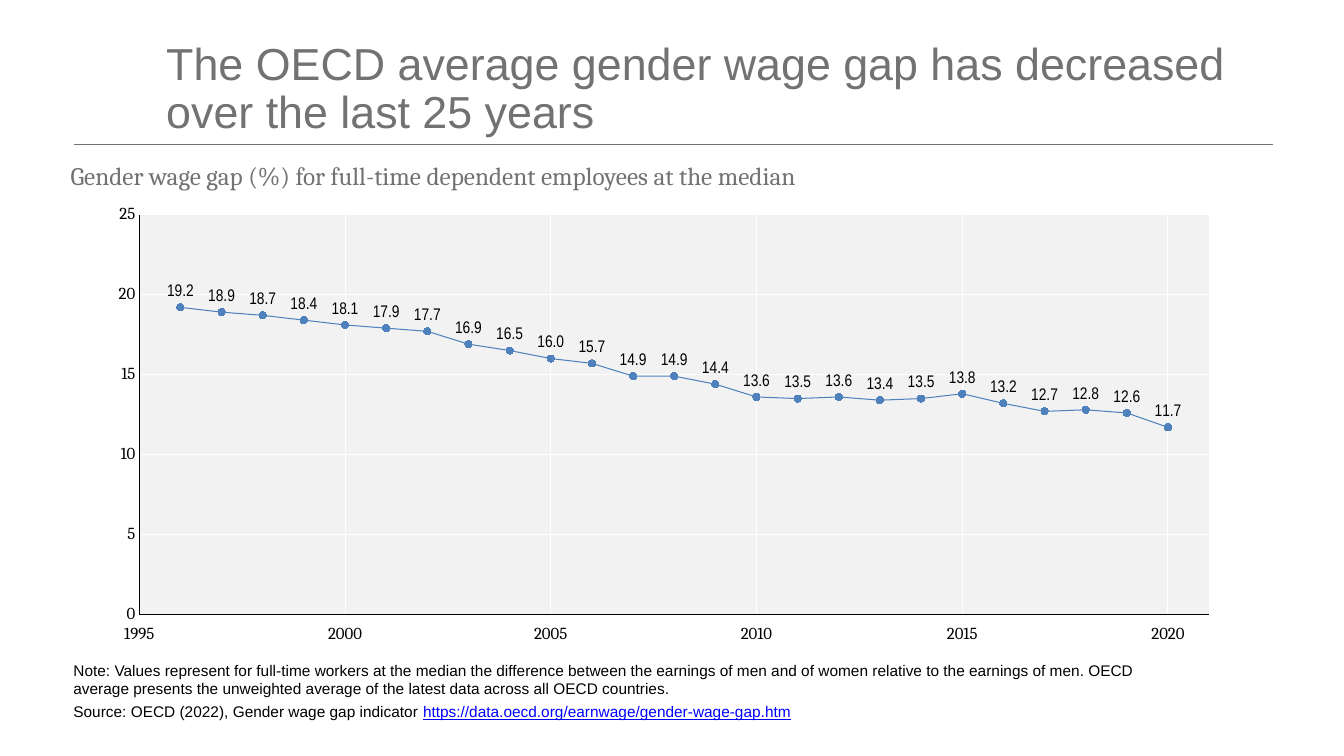
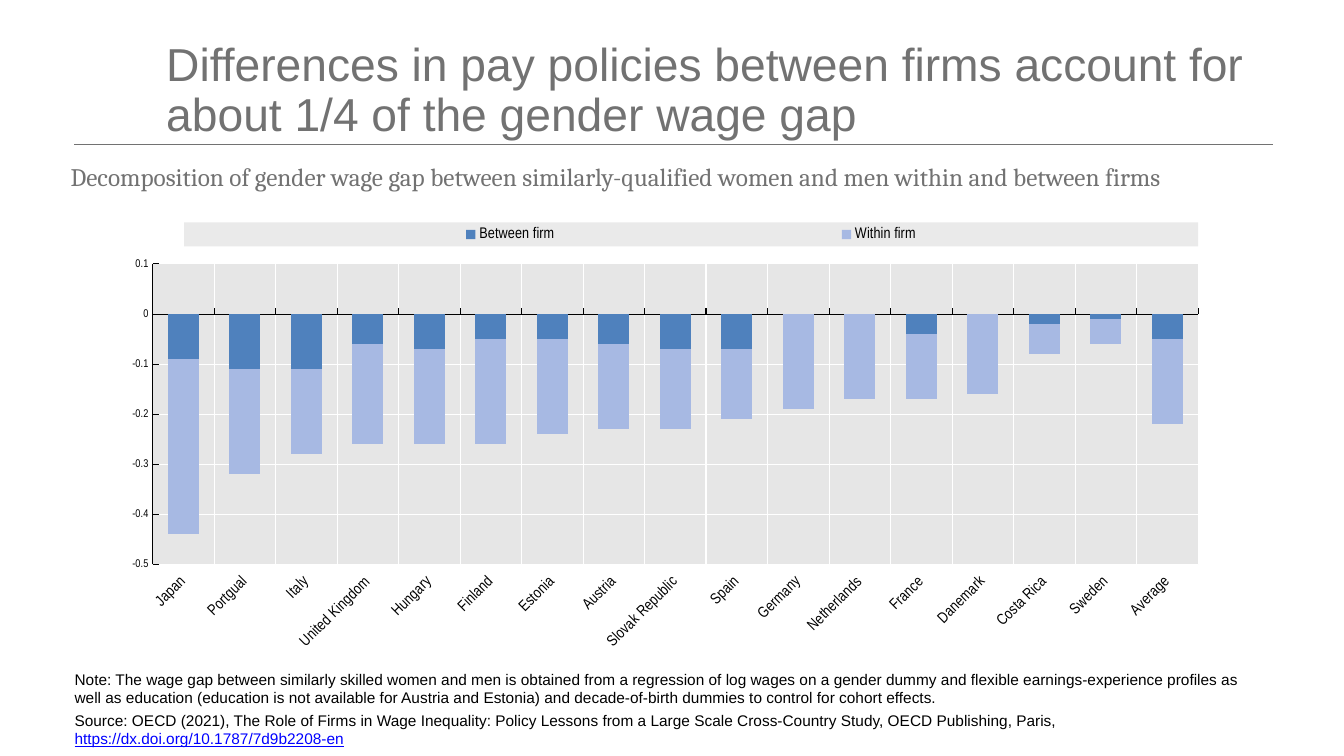
from dataclasses import dataclass

from lxml.etree import SubElement
from pptx import Presentation
from pptx.chart.axis import ValueAxis
from pptx.chart.chart import Chart
from pptx.chart.data import CategoryChartData, XyChartData
from pptx.chart.datalabel import DataLabels
from pptx.dml.color import RGBColor
from pptx.enum.chart import (XL_CHART_TYPE, XL_LABEL_POSITION, XL_LEGEND_POSITION,
                             XL_MARKER_STYLE, XL_TICK_LABEL_POSITION, XL_TICK_MARK)
from pptx.enum.shapes import MSO_CONNECTOR
from pptx.oxml import parse_xml
from pptx.oxml.ns import nsdecls, qn
from pptx.slide import Slide
from pptx.text.text import Font, TextFrame
from pptx.util import Cm, Pt


# Theme
@dataclass(frozen=True)
class Theme:
    grey: str = "727272"
    black: str = "000000"
    white: str = "FFFFFF"
    link: str = "0000FF"
    blue: str = "4F81BD"
    pale: str = "A7B9E3"
    light: str = "F2F2F2"
    mid: str = "E6E6E6"
    band: str = "EAEAEA"
    sans: str = "Arial"
    thin: str = "Arial Narrow"
    serif: str = "Cambria"
    head: float = 32
    wide: float = 33
    sub: float = 18
    note: float = 11
    base: float = 10
    label: float = 12
    small: float = 8
    hair: float = 0.5
    line: float = 0.75


THEME = Theme()


@dataclass(frozen=True)
class Box:
    left: float
    top: float
    width: float
    height: float

    def spans(self) -> tuple[Cm, Cm, Cm, Cm]:
        return Cm(self.left), Cm(self.top), Cm(self.width), Cm(self.height)


@dataclass(frozen=True)
class Page:
    title: str
    size: float
    sub: str
    sub_box: Box
    note: str
    source: str
    link: str
    note_box: Box
    chart_box: Box
    pitch: float | None = None


# Content
TREND = Page(
    title="The OECD average gender wage gap has decreased over the last 25 years",
    size=THEME.head,
    sub="Gender wage gap (%) for full-time dependent employees at the median",
    sub_box=Box(1.53, 3.91, 30.76, 1.02),
    note="Note: Values represent for full-time workers at the median the difference "
         "between the earnings of men and of women relative to the earnings of men. "
         "OECD average presents the unweighted average of the latest data across all "
         "OECD countries.",
    source="Source: OECD (2022), Gender wage gap indicator ",
    link="https://data.oecd.org/earnwage/gender-wage-gap.htm",
    note_box=Box(1.6, 16.53, 28.6, 1.78),
    chart_box=Box(2.74, 4.94, 27.79, 11.39),
)
FIRMS = Page(
    title="Differences in pay policies between firms account for about 1/4 of the "
          "gender wage gap",
    size=THEME.wide,
    sub="Decomposition of gender wage gap between similarly-qualified women and men "
        "within and between firms",
    sub_box=Box(1.53, 4.24, 31.6, 0.71),
    note="Note: The wage gap between similarly skilled women and men is obtained from a "
         "regression of log wages on a gender dummy and flexible earnings-experience "
         "profiles as well as education (education is not available for Austria and "
         "Estonia) and decade-of-birth dummies to control for cohort effects.",
    source="Source: OECD (2021), The Role of Firms in Wage Inequality: Policy Lessons "
           "from a Large Scale Cross-Country Study, OECD Publishing, Paris, ",
    link="https://dx.doi.org/10.1787/7d9b2208-en",
    note_box=Box(1.63, 16.75, 30.1, 2.24),
    chart_box=Box(3.09, 5.45, 27.16, 11.02),
    pitch=13,
)
START = 1995
GAPS = (None, 19.2, 18.9, 18.7, 18.4, 18.1, 17.9, 17.7, 16.9, 16.5, 16.0, 15.7, 14.9,
        14.9, 14.4, 13.6, 13.5, 13.6, 13.4, 13.5, 13.8, 13.2, 12.7, 12.8, 12.6, 11.7)
LANDS = ("Japan", "Portgual", "Italy", "United Kingdom", "Hungary", "Finland", "Estonia",
         "Austria", "Slovak Republic", "Spain", "Germany", "Netherlands", "France",
         "Danemark", "Costa Rica", "Sweden", "Average")
BETWEEN = (-0.09, -0.11, -0.11, -0.06, -0.07, -0.05, -0.05, -0.06, -0.07, -0.07, 0, 0,
           -0.04, 0, -0.02, -0.01, -0.05)
WITHIN = (-0.35, -0.21, -0.17, -0.2, -0.19, -0.21, -0.19, -0.17, -0.16, -0.14, -0.19,
          -0.17, -0.13, -0.16, -0.06, -0.05, -0.17)


# Text and frame
def style(font: Font, face: str, size: float, color: str) -> None:
    font.name, font.size = face, Pt(size)
    font.color.rgb = RGBColor.from_string(color)


def add_text(slide: Slide, box: Box, text: str, face: str, size: float,
             color: str) -> TextFrame:
    frame = slide.shapes.add_textbox(*box.spans()).text_frame
    frame.word_wrap = True
    frame.text = text
    for para in frame.paragraphs:
        style(para.runs[0].font, face, size, color)
    return frame


def add_frame(slide: Slide, page: Page) -> None:
    # Rule under the title
    rule = slide.shapes.add_connector(MSO_CONNECTOR.STRAIGHT, Cm(1.87), Cm(3.65),
                                      Cm(32.07), Cm(3.65))
    rule.line.color.rgb = RGBColor.from_string(THEME.grey)
    rule.line.width = Pt(THEME.hair)
    SubElement(rule._element.spPr, qn("a:effectLst"))

    # Title and subtitle
    title = add_text(slide, Box(3.94, 0.93, 28.68, 1.19), page.title, THEME.sans,
                     page.size, THEME.grey)
    title.paragraphs[0].line_spacing = 0.9
    sub = add_text(slide, page.sub_box, page.sub, THEME.serif, THEME.sub, THEME.grey)
    if page.pitch:
        sub.paragraphs[0].line_spacing = Pt(page.pitch)

    # Note and source
    notes = add_text(slide, page.note_box, f"{page.note}\n{page.source}", THEME.sans,
                     THEME.note, THEME.black)
    for para in notes.paragraphs:
        para.space_after = Pt(3)
    link = notes.paragraphs[-1].add_run()
    link.text = page.link
    style(link.font, THEME.sans, THEME.note, THEME.link)
    link.font.underline = True


# Chart parts
def place(part, index: int, x: float, y: float, w: float, h: float) -> None:
    for old in part.findall(qn("c:layout")):
        part.remove(old)
    part.insert(index, parse_xml(
        f'<c:layout {nsdecls("c")}><c:manualLayout>'
        '<c:xMode val="edge"/><c:yMode val="edge"/>'
        f'<c:x val="{x}"/><c:y val="{y}"/><c:w val="{w}"/><c:h val="{h}"/>'
        '</c:manualLayout></c:layout>'))


def fill_xml(color: str, edge: str | None = None):
    def solid(tint: str) -> str:
        return f'<a:solidFill><a:srgbClr val="{tint}"/></a:solidFill>'
    width = Pt(THEME.line)
    line = f'<a:ln w="{width}">{solid(edge)}</a:ln>' if edge else '<a:ln><a:noFill/></a:ln>'
    return parse_xml(f'<c:spPr {nsdecls("c", "a")}>{solid(color)}{line}</c:spPr>')


def set_axis(axis, face: str, size: float, tick: XL_TICK_MARK) -> None:
    axis.has_major_gridlines = True
    for line, color in ((axis.format.line, THEME.black),
                        (axis.major_gridlines.format.line, THEME.white)):
        line.color.rgb = RGBColor.from_string(color)
        line.width = Pt(THEME.line)
    axis.major_tick_mark = tick
    axis.minor_tick_mark = XL_TICK_MARK.NONE
    style(axis.tick_labels.font, face, size, THEME.black)


def set_scale(axis: ValueAxis, low: float, high: float, step: float) -> None:
    axis.minimum_scale, axis.maximum_scale, axis.major_unit = low, high, step


def add_chart(slide: Slide, box: Box, kind: XL_CHART_TYPE, data, color: str,
              edge: str | None, top: float, height: float) -> Chart:
    chart = slide.shapes.add_chart(kind, *box.spans(), data).chart
    chart.has_title = chart.has_legend = False
    style(chart.font, THEME.serif, THEME.base, THEME.grey)
    chart.plots[0].vary_by_categories = False
    chart.category_axis.tick_label_position = XL_TICK_LABEL_POSITION.LOW
    area = chart._chartSpace.chart.plotArea
    place(area, 0, 0.009, top, 0.989, height)
    area.append(fill_xml(color, edge))
    return chart


# Line of the average gap
def add_trend(slide: Slide, box: Box) -> None:
    data = XyChartData()
    points = data.add_series("Series 1")
    for year, gap in enumerate(GAPS, START):
        points.add_data_point(year, gap)
    chart = add_chart(slide, box, XL_CHART_TYPE.XY_SCATTER_LINES, data, THEME.light,
                      THEME.white, 0.02, 0.97)
    for axis in (chart.category_axis, chart.value_axis):
        set_axis(axis, THEME.serif, THEME.label, XL_TICK_MARK.NONE)
        axis.tick_labels.number_format = "General"
        axis.tick_labels.number_format_is_linked = False
    set_scale(chart.category_axis, 1995, 2021, 5)
    set_scale(chart.value_axis, 0, 25, 5)

    blue = RGBColor.from_string(THEME.blue)
    series = chart.plots[0].series[0]
    # Years without a value hold no point
    cache = series._element.find(qn("c:yVal")).find(f".//{qn('c:numCache')}")
    for point in cache.findall(qn("c:pt")):
        if GAPS[int(point.get("idx"))] is None:
            cache.remove(point)
    series.format.line.color.rgb = blue
    series.format.line.width = Pt(THEME.line)
    mark = series.marker
    mark.style, mark.size = XL_MARKER_STYLE.CIRCLE, 5
    mark.format.fill.solid()
    mark.format.fill.fore_color.rgb = blue
    mark.format.line.color.rgb = blue

    labels = DataLabels(series._element.get_or_add_dLbls())
    labels.show_value = True
    labels.number_format = "0.0"
    labels.number_format_is_linked = False
    labels.position = XL_LABEL_POSITION.ABOVE
    style(labels.font, THEME.thin, THEME.label, THEME.black)


# Stacked bars by country
def add_bars(slide: Slide, box: Box) -> None:
    data = CategoryChartData()
    data.categories = LANDS
    data.add_series("Between firm", BETWEEN)
    data.add_series("Within firm", WITHIN)
    chart = add_chart(slide, box, XL_CHART_TYPE.COLUMN_STACKED, data, THEME.mid, None,
                      0.097, 0.895)
    set_axis(chart.category_axis, THEME.thin, THEME.note, XL_TICK_MARK.INSIDE)
    set_axis(chart.value_axis, THEME.thin, THEME.small, XL_TICK_MARK.INSIDE)
    set_scale(chart.value_axis, -0.5, 0.1, 0.1)
    turn = chart.category_axis._element.find(qn("c:txPr")).find(qn("a:bodyPr"))
    turn.set("rot", str(-45 * 60000))
    turn.set("vert", "horz")

    plot = chart.plots[0]
    plot.gap_width, plot.overlap = 100, 100
    for series, color in zip(plot.series, (THEME.blue, THEME.pale)):
        series.format.fill.solid()
        series.format.fill.fore_color.rgb = RGBColor.from_string(color)
        series.invert_if_negative = False

    chart.has_legend = True
    legend = chart.legend
    legend.position = XL_LEGEND_POSITION.TOP
    legend.include_in_layout = True
    style(legend.font, THEME.thin, THEME.note, THEME.black)
    part = legend._element
    place(part, 1, 0.057, 0.014, 0.941, 0.055)
    part.find(qn("c:overlay")).addnext(fill_xml(THEME.band))


def main() -> None:
    deck = Presentation()
    deck.slide_width, deck.slide_height = Cm(33.87), Cm(19.05)
    for page, draw in ((TREND, add_trend), (FIRMS, add_bars)):
        slide = deck.slides.add_slide(deck.slide_layouts[6])
        add_frame(slide, page)
        draw(slide, page.chart_box)
    deck.save("out.pptx")


if __name__ == "__main__":
    main()
